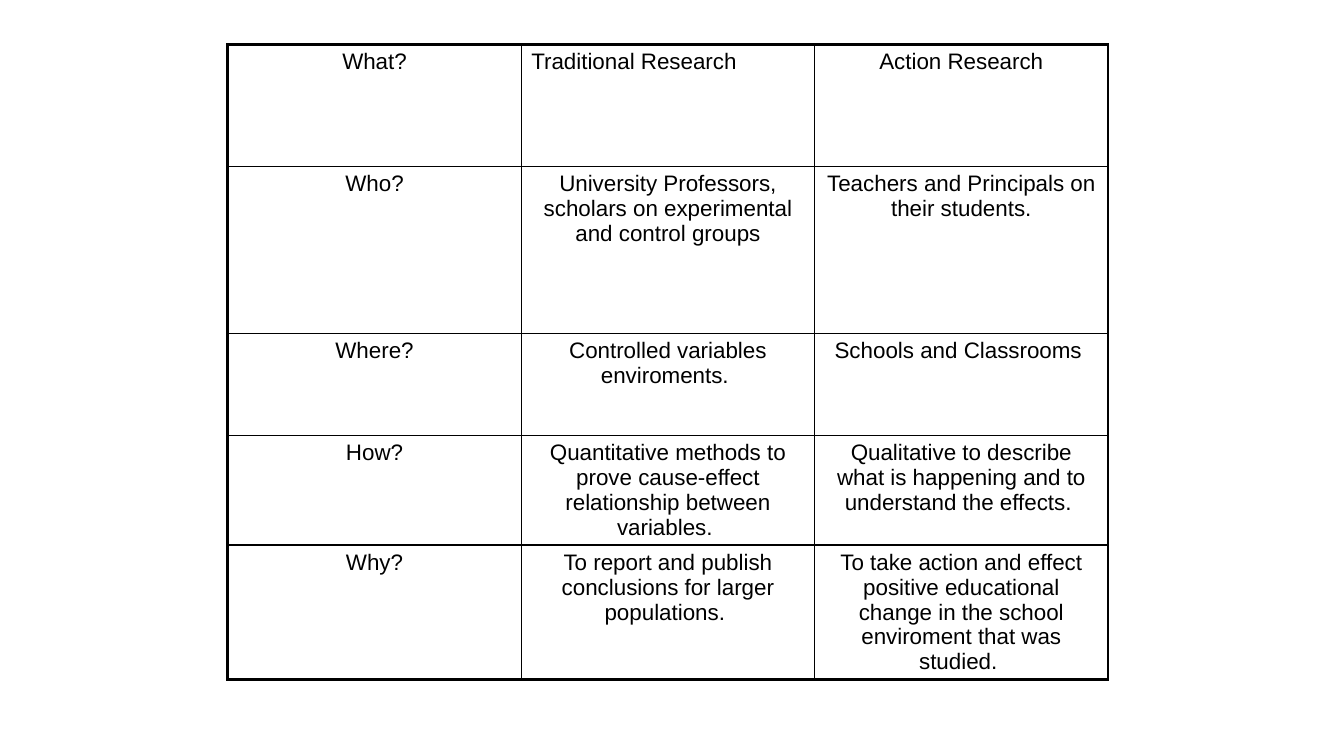
"""Build a slide with a table comparing traditional and action research."""
from dataclasses import dataclass

from lxml.etree import SubElement
from pptx import Presentation
from pptx.dml.color import RGBColor
from pptx.enum.text import PP_ALIGN
from pptx.oxml.ns import qn
from pptx.util import Inches, Pt

COMPARISON = [
    ("What?", "Traditional Research", "Action Research"),
    ("Who?",
     "University Professors, scholars on experimental and control groups",
     "Teachers and Principals on their students."),
    ("Where?", "Controlled variables enviroments. ", "Schools and Classrooms "),
    ("How?",
     "Quantitative methods to prove cause-effect relationship between variables. ",
     "Qualitative to describe what is happening and to understand the effects. "),
    ("Why?",
     "To report and publish conclusions for larger populations. ",
     "To take action and effect positive educational change in the school "
     "enviroment that was studied. "),
]
LEFT_ALIGNED = {"Traditional Research"}
ROW_HEIGHTS = (1.21, 1.66, 1.01, 1.01, 1.01)
COLUMN_WIDTH = 2.91
TABLE_LEFT, TABLE_TOP = 2.26, 0.44


@dataclass(frozen=True)
class Theme:
    font: str = "Arial"
    size: float = 16
    ink: str = "000000"
    paper: str = "FFFFFF"
    outer_line: float = 2.25
    inner_line: float = 1


THEME = Theme()


def write(cell, text, *, align=PP_ALIGN.CENTER, size=THEME.size, color=THEME.ink):
    paragraph = cell.text_frame.paragraphs[0]
    paragraph.alignment = align
    run = paragraph.add_run()
    run.text = text
    run.font.name = THEME.font
    run.font.size = Pt(size)
    run.font.color.rgb = RGBColor.from_string(color)


def draw_borders(cell, outer_sides):
    properties = cell._tc.get_or_add_tcPr()
    for position, side in enumerate("LRTB"):
        width = THEME.outer_line if side in outer_sides else THEME.inner_line
        border = SubElement(properties, qn(f"a:ln{side}"), w=str(Pt(width)))
        ink = SubElement(border, qn("a:solidFill"))
        SubElement(ink, qn("a:srgbClr"), val=THEME.ink)
        properties.insert(position, border)


def find_outer_sides(row, column, row_count, column_count):
    edges = {"L": column == 0, "R": column == column_count - 1,
             "T": row == 0, "B": row == row_count - 1}
    return {side for side, is_outer in edges.items() if is_outer}


def add_comparison(slide):
    row_count, column_count = len(COMPARISON), len(COMPARISON[0])
    table = slide.shapes.add_table(
        row_count, column_count, Inches(TABLE_LEFT), Inches(TABLE_TOP),
        Inches(COLUMN_WIDTH * column_count), Inches(sum(ROW_HEIGHTS))).table
    table.first_row = table.horz_banding = False
    for column in table.columns:
        column.width = Inches(COLUMN_WIDTH)
    for row, answers in enumerate(COMPARISON):
        table.rows[row].height = Inches(ROW_HEIGHTS[row])
        for column, answer in enumerate(answers):
            cell = table.cell(row, column)
            cell.fill.solid()
            cell.fill.fore_color.rgb = RGBColor.from_string(THEME.paper)
            draw_borders(cell, find_outer_sides(row, column, row_count, column_count))
            align = PP_ALIGN.LEFT if answer in LEFT_ALIGNED else PP_ALIGN.CENTER
            write(cell, answer, align=align)


def main():
    presentation = Presentation()
    presentation.slide_width = Inches(13.33)
    presentation.slide_height = Inches(7.5)
    add_comparison(presentation.slides.add_slide(presentation.slide_layouts[6]))
    presentation.save("out.pptx")


if __name__ == "__main__":
    main()
